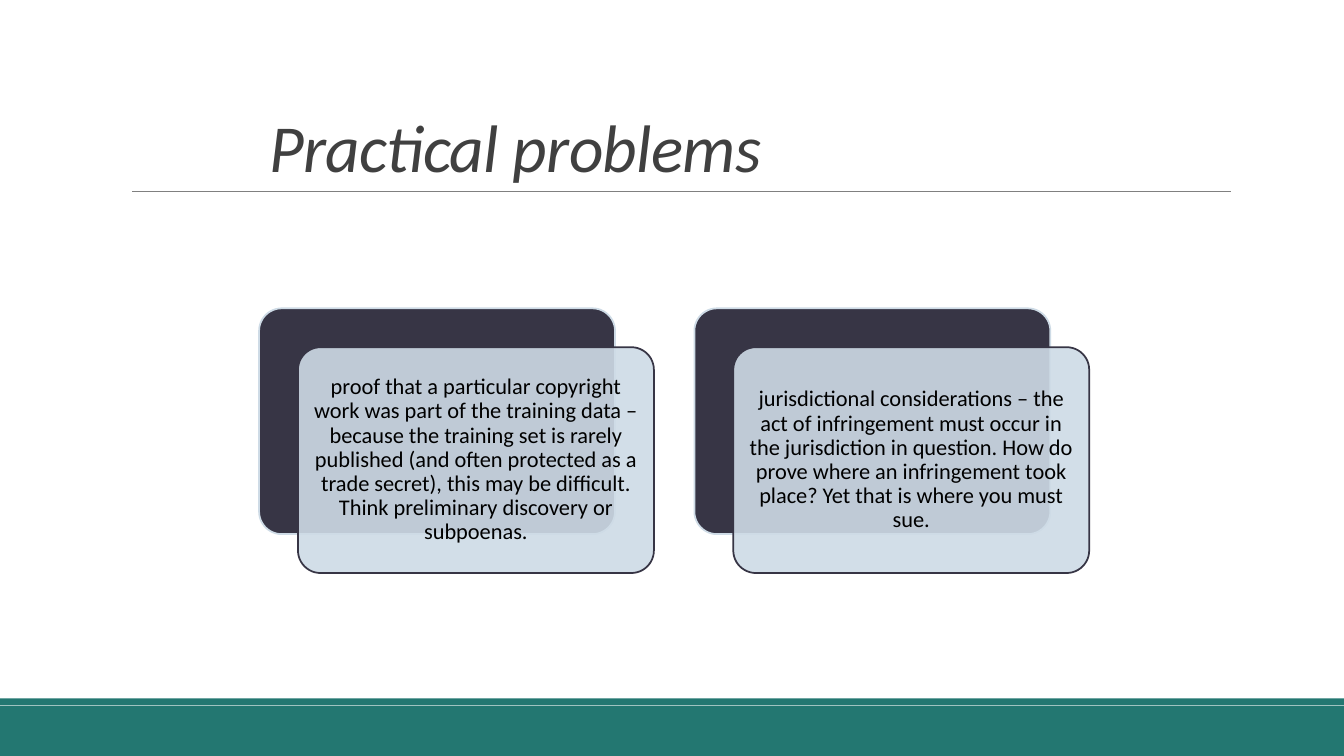
from lxml import etree
from pptx import Presentation
from pptx.dml.color import RGBColor
from pptx.enum import shapes, text
from pptx.oxml import ns
from pptx.util import Cm, Pt

COLOURS = {
    "teal": "237771",
    "rule": "808080",
    "title": "404040",
    "dark": "373545",
    "pale": "CEDBE6",
    "black": "000000",
}
FONT = "Calibri"
SLIDE_WIDTH, SLIDE_HEIGHT = 33.87, 19.05
CARD_LEFT, CARD_TOP = 6.53, 7.77
CARD_WIDTH, CARD_HEIGHT = 8.97, 5.69
CARD_STEP = 10.97
CARD_OFFSET = 0.98
PROBLEMS = [
    "proof that a particular copyright work was part of the training data – "
    "because the training set is rarely published (and often protected as a "
    "trade secret), this may be difficult. Think preliminary discovery or subpoenas.",
    "jurisdictional considerations – the act of infringement must occur in the "
    "jurisdiction in question. How do prove where an infringement took place? "
    "Yet that is where you must sue.",
]


def colour(name):
    return RGBColor.from_string(COLOURS[name])


def add_span(para, words, size, colour_name):
    span = para.add_run()
    span.text = words
    span.font.name = FONT
    span.font.size = Pt(size)
    span.font.color.rgb = colour(colour_name)
    return span


def add_box(page, kind, left, top, width, height, fill, line=None):
    box = page.shapes.add_shape(kind, Cm(left), Cm(top), Cm(width), Cm(height))
    box.shadow.inherit = False
    box.fill.solid()
    box.fill.fore_color.rgb = colour(fill)
    if line:
        box.line.color.rgb = colour(line)
        box.line.width = Pt(1.25)
    else:
        box.line.fill.background()
    return box


def add_band(page, top, height):
    add_box(page, shapes.MSO_SHAPE.RECTANGLE, 0, top, SLIDE_WIDTH, height, "teal")


def add_rule(page, left, right, top):
    rule = page.shapes.add_connector(
        shapes.MSO_CONNECTOR.STRAIGHT, Cm(left), Cm(top), Cm(right), Cm(top))
    rule.line.color.rgb = colour("rule")
    rule.line.width = Pt(0.5)
    etree.SubElement(rule.element.spPr, ns.qn("a:effectLst"))


def set_title(page, words):
    title = page.shapes.title
    title.left, title.top = Cm(6.53), Cm(0.79)
    title.width, title.height = Cm(20.96), Cm(4.04)
    frame = title.text_frame
    frame.word_wrap = True
    frame.auto_size = text.MSO_AUTO_SIZE.NONE
    frame.vertical_anchor = text.MSO_ANCHOR.BOTTOM
    para = frame.paragraphs[0]
    para.alignment = text.PP_ALIGN.LEFT
    para.line_spacing = 0.85
    span = add_span(para, words, 48, "title")
    span.font.italic = True
    span.font._element.set("spc", "-50")


def add_rounded(page, left, top, fill, line):
    box = add_box(page, shapes.MSO_SHAPE.ROUNDED_RECTANGLE,
                  left, top, CARD_WIDTH, CARD_HEIGHT, fill, line)
    box.adjustments[0] = 0.1
    return box


def set_opacity(box, percent):
    tint = box.element.spPr.find(ns.qn("a:solidFill"))[0]
    etree.SubElement(tint, ns.qn("a:alpha"), val=str(percent * 1000))


def add_card(page, left, words):
    add_rounded(page, left, CARD_TOP, "dark", "pale")
    front = add_rounded(page, left + CARD_OFFSET, CARD_TOP + CARD_OFFSET, "pale", "dark")
    set_opacity(front, 90)
    frame = front.text_frame
    frame.word_wrap = True
    frame.vertical_anchor = text.MSO_ANCHOR.MIDDLE
    frame.margin_left = frame.margin_right = Cm(0.18)
    frame.margin_top = frame.margin_bottom = Cm(0.18)
    para = frame.paragraphs[0]
    para.alignment = text.PP_ALIGN.CENTER
    para.line_spacing = 0.9
    add_span(para, words, 16, "black")


def main():
    deck = Presentation()
    deck.slide_width, deck.slide_height = Cm(SLIDE_WIDTH), Cm(SLIDE_HEIGHT)
    page = deck.slides.add_slide(deck.slide_layouts.get_by_name("Title Only"))
    add_band(page, 17.78, 1.27)
    add_band(page, 17.6, 0.17)
    add_rule(page, 3.33, 31.01, 4.83)
    set_title(page, "Practical problems")
    for index, words in enumerate(PROBLEMS):
        add_card(page, CARD_LEFT + index * CARD_STEP, words)
    deck.save("out.pptx")


if __name__ == "__main__":
    main()
